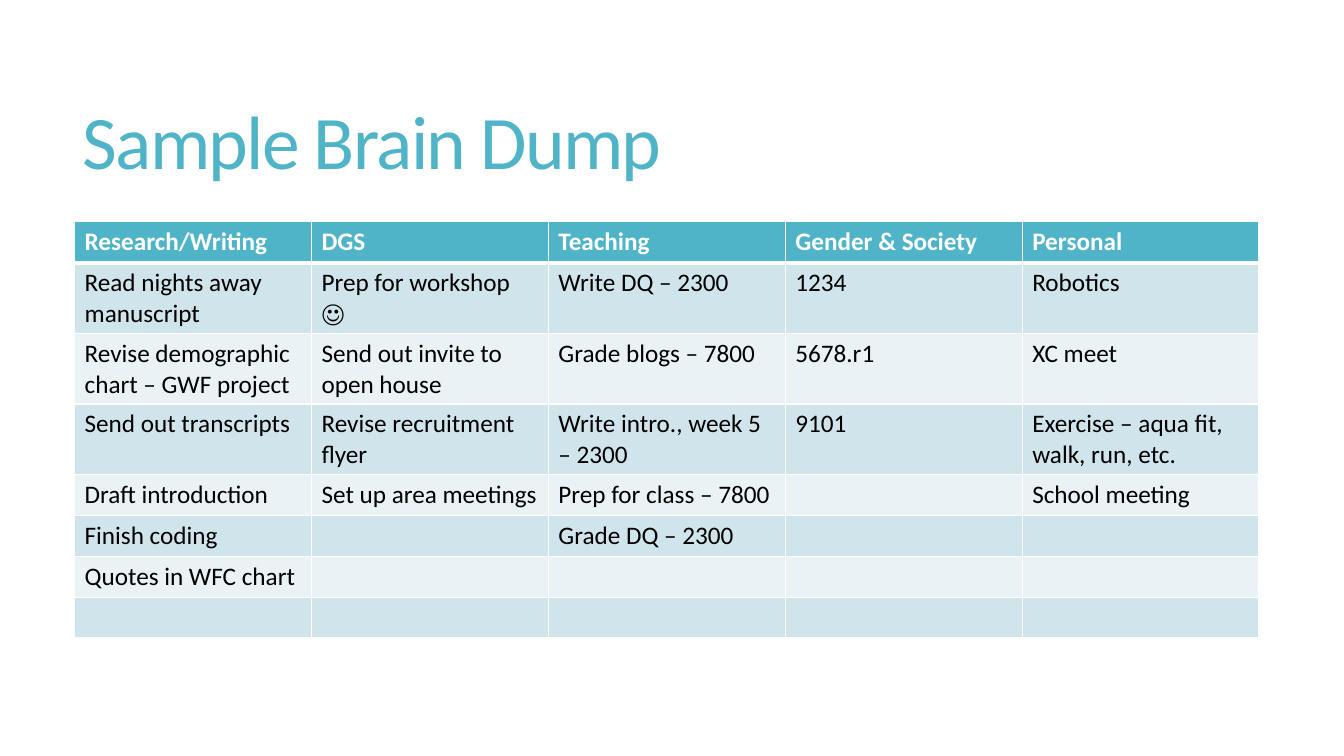
from dataclasses import dataclass

from lxml import etree
from pptx import Presentation
from pptx import util as u
from pptx.dml.color import RGBColor
from pptx.enum import text
from pptx.oxml import ns

TEAL, WHITE, BLACK = "50B4C8", "FFFFFF", "000000"
BANDS = ("D0E5EB", "E9F2F5")
ROW_COUNT = 8
COLUMN_WIDTH = u.Cm(5.97)
ROW_HEIGHT = u.Cm(1.03)


@dataclass(frozen=True)
class TaskColumn:
    heading: str
    tasks: tuple[str, ...]


@dataclass(frozen=True)
class CellStyle:
    fill: str
    color: str
    bold: bool
    top: float
    bottom: float


TASK_COLUMNS = (
    TaskColumn("Research/Writing", (
        "Read nights away manuscript",
        "Revise demographic chart – GWF project",
        "Send out transcripts",
        "Draft introduction",
        "Finish coding",
        "Quotes in WFC chart",
    )),
    TaskColumn("DGS", (
        "Prep for workshop ☺",
        "Send out invite to open house",
        "Revise recruitment flyer",
        "Set up area meetings",
    )),
    TaskColumn("Teaching", (
        "Write DQ – 2300",
        "Grade blogs – 7800",
        "Write intro., week 5 – 2300",
        "Prep for class – 7800",
        "Grade DQ – 2300",
    )),
    TaskColumn("Gender & Society", ("1234", "5678.r1", "9101")),
    TaskColumn("Personal", (
        "Robotics",
        "XC meet",
        "Exercise – aqua fit, walk, run, etc.",
        "School meeting",
    )),
)


def rgb(value: str) -> RGBColor:
    return RGBColor.from_string(value)


def set_format(target, values: dict) -> None:
    for name, value in values.items():
        setattr(target, name, value)


def write_run(paragraph, wording: str, size: float, color: str, bold: bool = False):
    run = paragraph.add_run()
    run.text = wording
    set_format(run.font, {"name": "Calibri", "size": u.Pt(size), "bold": bold})
    run.font.color.rgb = rgb(color)
    return run


def add_title(slide) -> None:
    shape = slide.shapes.add_textbox(u.Cm(1.83), u.Cm(1.4), u.Cm(29.92), u.Cm(4.6))
    set_format(shape.text_frame, {
        "word_wrap": True,
        "vertical_anchor": text.MSO_ANCHOR.MIDDLE,
    })
    paragraph = shape.text_frame.paragraphs[0]
    paragraph.line_spacing = 0.85
    run = write_run(paragraph, "Sample Brain Dump", 54, TEAL)
    run.font._element.set("spc", "-120")


def add_borders(cell, style: CellStyle) -> None:
    properties = cell._tc.get_or_add_tcPr()
    widths = {"lnL": 1, "lnR": 1, "lnT": style.top, "lnB": style.bottom}
    for tag, width in widths.items():
        line = etree.SubElement(properties, ns.qn(f"a:{tag}"), w=str(u.Pt(width)))
        fill = etree.SubElement(line, ns.qn("a:solidFill"))
        etree.SubElement(fill, ns.qn("a:srgbClr"), val=WHITE)


def row_style(row: int) -> CellStyle:
    if row == 0:
        return CellStyle(TEAL, WHITE, True, 1, 3)
    return CellStyle(BANDS[(row - 1) % 2], BLACK, False, 3 if row == 1 else 1, 1)


def fill_cell(cell, wording: str, style: CellStyle) -> None:
    add_borders(cell, style)
    cell.fill.solid()
    cell.fill.fore_color.rgb = rgb(style.fill)
    if wording:
        write_run(cell.text_frame.paragraphs[0], wording, 18, style.color, style.bold)


def add_task_table(slide) -> None:
    count = len(TASK_COLUMNS)
    table = slide.shapes.add_table(
        ROW_COUNT, count, u.Cm(1.88), u.Cm(5.59),
        COLUMN_WIDTH * count, ROW_HEIGHT * ROW_COUNT,
    ).table
    for row in table.rows:
        row.height = ROW_HEIGHT
    for column, task_column in enumerate(TASK_COLUMNS):
        table.columns[column].width = COLUMN_WIDTH
        wordings = (task_column.heading, *task_column.tasks)
        for row in range(ROW_COUNT):
            wording = wordings[row] if row < len(wordings) else ""
            fill_cell(table.cell(row, column), wording, row_style(row))


def main() -> None:
    presentation = Presentation()
    set_format(presentation, {"slide_width": u.Cm(33.87), "slide_height": u.Cm(19.05)})
    slide = presentation.slides.add_slide(presentation.slide_layouts[6])
    add_title(slide)
    add_task_table(slide)
    presentation.save("out.pptx")


if __name__ == "__main__":
    main()
